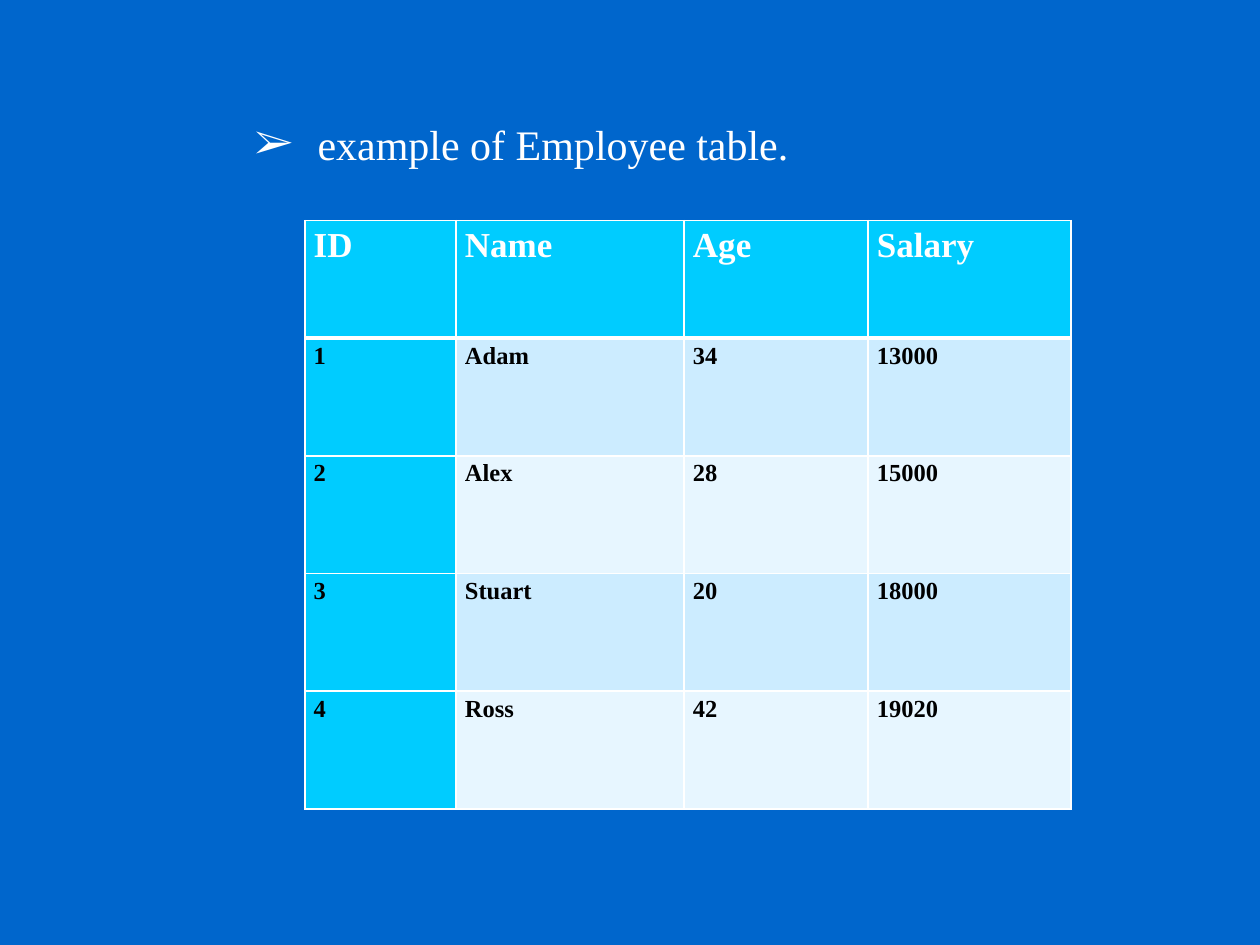
from lxml.etree import SubElement
from pptx import Presentation
from pptx.dml.color import RGBColor
from pptx.enum.text import MSO_ANCHOR, MSO_AUTO_SIZE, PP_ALIGN
from pptx.oxml.ns import qn
from pptx.util import Inches, Pt

COLORS = {
    "background": "0066CC",
    "accent": "00CCFF",
    "odd_row": "CCECFF",
    "even_row": "E7F6FF",
    "white": "FFFFFF",
    "black": "000000",
}
FONT = "Times New Roman"
COLUMN_WIDTHS = [1.2, 1.81, 1.46, 1.61]
EMPLOYEES = [
    ["ID", "Name", "Age", "Salary"],
    ["1", "Adam", "34", "13000"],
    ["2", "Alex", "28", "15000"],
    ["3", "Stuart", "20", "18000"],
    ["4", "Ross", "42", "19020"],
]


def color(name):
    """Return the palette colour with the given name."""
    return RGBColor.from_string(COLORS[name])


def write_text(para, text, size=14, ink="black", bold=False, align=PP_ALIGN.LEFT, spacing=1.0):
    """Write one formatted span of text into a paragraph."""
    para.alignment = align
    para.line_spacing = spacing
    span = para.add_run()
    span.text = text
    span.font.name = FONT
    span.font.size = Pt(size)
    span.font.bold = bold
    span.font.color.rgb = color(ink)


def add_bullet(para, symbol, indent):
    """Give a paragraph a bullet with a hanging indent."""
    properties = para._p.get_or_add_pPr()
    properties.set("marL", str(indent))
    properties.set("indent", str(-indent))
    SubElement(properties, qn("a:buFont"), typeface=FONT)
    SubElement(properties, qn("a:buChar"), char=symbol)


def add_borders(cell, widths):
    """Draw white cell borders, given points by side in L, R, T, B order."""
    properties = cell._tc.get_or_add_tcPr()
    for side, width in widths.items():
        line = SubElement(properties, qn(f"a:ln{side}"), w=str(Pt(width)))
        fill = SubElement(line, qn("a:solidFill"))
        SubElement(fill, qn("a:srgbClr"), val=COLORS["white"])


def place_heading(page, left, top, width, height):
    """Place the bulleted heading in the title placeholder."""
    box = page.shapes.title
    box.left, box.top, box.width, box.height = left, top, width, height
    frame = box.text_frame
    frame.word_wrap = True
    frame.auto_size = MSO_AUTO_SIZE.SHAPE_TO_FIT_TEXT
    frame.vertical_anchor = MSO_ANCHOR.TOP
    para = frame.paragraphs[0]
    add_bullet(para, "➢", Inches(0.5))
    write_text(para, "example of Employee table.", size=24, ink="white", align=PP_ALIGN.JUSTIFY)


def fill_cell(cell, text, row, column):
    """Format one cell by its place in the table."""
    header = row == 0
    band = "odd_row" if row % 2 else "even_row"
    cell.margin_left = cell.margin_right = Inches(0.07)
    cell.margin_top = cell.margin_bottom = 0
    add_borders(cell, {"L": 1, "R": 1, "T": 3 if row == 1 else 1, "B": 3 if header else 1})
    cell.fill.solid()
    cell.fill.fore_color.rgb = color("accent" if header or column == 0 else band)
    write_text(
        cell.text_frame.paragraphs[0],
        text,
        size=20 if header else 14,
        ink="white" if header else "black",
        bold=True,
        align=PP_ALIGN.JUSTIFY if header or column == 0 else PP_ALIGN.LEFT,
        spacing=1.15,
    )


def place_table(page, left, top, width, height):
    """Place the employee table in the given box."""
    table = page.shapes.add_table(
        len(EMPLOYEES), len(COLUMN_WIDTHS), left, top, width, height
    ).table
    table.first_col = True
    for column, column_width in zip(table.columns, COLUMN_WIDTHS):
        column.width = Inches(column_width)
    for row, values in enumerate(EMPLOYEES):
        for column, text in enumerate(values):
            fill_cell(table.cell(row, column), text, row, column)


def main():
    """Build and save the deck."""
    deck = Presentation()
    deck.slide_width, deck.slide_height = Inches(10), Inches(7.5)
    page = deck.slides.add_slide(deck.slide_layouts[5])
    page.background.fill.solid()
    page.background.fill.fore_color.rgb = color("background")
    place_table(page, Inches(2.42), Inches(1.75), Inches(sum(COLUMN_WIDTHS)), Inches(4.67))
    place_heading(page, Inches(1.92), Inches(0.89), Inches(5), Inches(0.5))
    deck.save("out.pptx")


if __name__ == "__main__":
    main()
